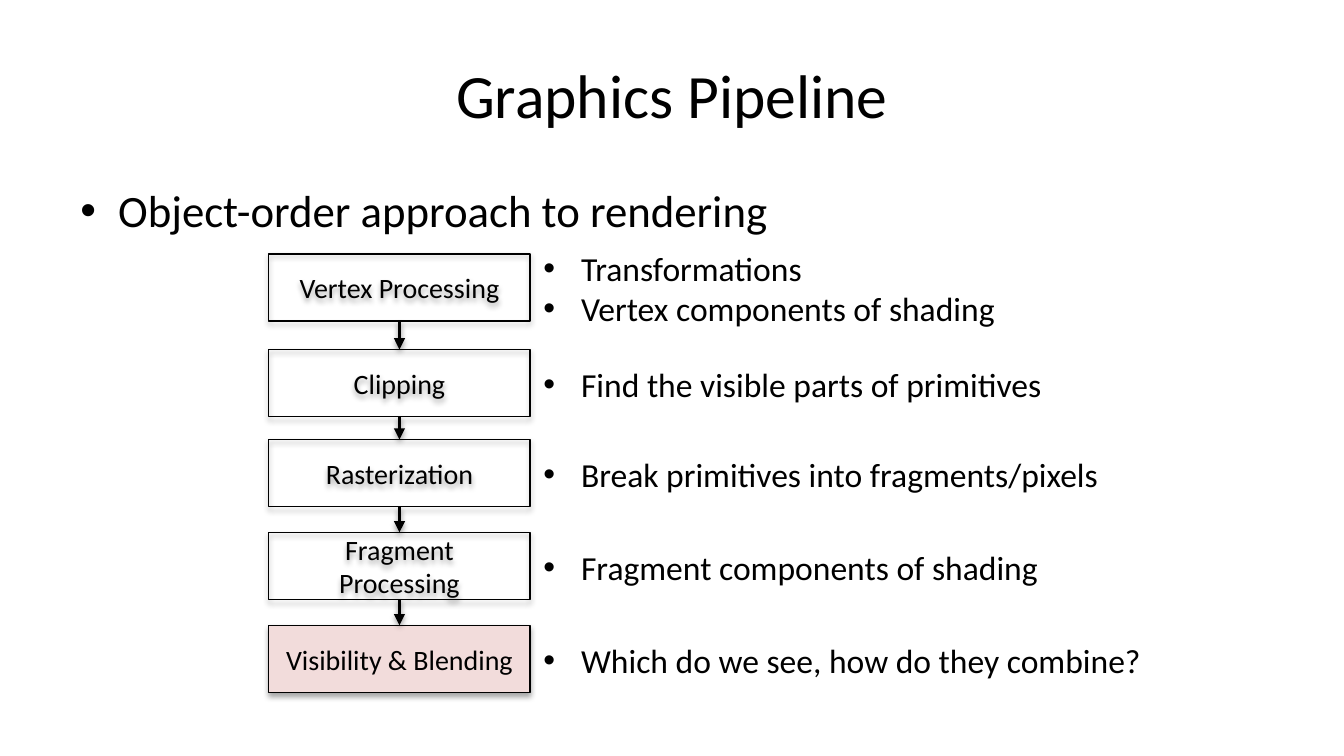
from dataclasses import dataclass

from pptx import Presentation
from pptx.dml.color import RGBColor
from pptx.enum.shapes import MSO_CONNECTOR, MSO_SHAPE
from pptx.enum.text import MSO_ANCHOR, PP_ALIGN
from pptx.oxml.ns import qn
from pptx.util import Pt
from lxml import etree

RECTANGLE = MSO_SHAPE.RECTANGLE
STRAIGHT = MSO_CONNECTOR.STRAIGHT
TOP, MIDDLE = MSO_ANCHOR.TOP, MSO_ANCHOR.MIDDLE
LEFT, CENTER = PP_ALIGN.LEFT, PP_ALIGN.CENTER
TOP_SITE, BOTTOM_SITE = 0, 2


@dataclass(frozen=True)
class Theme:
    font: str = "Calibri"
    ink: RGBColor = RGBColor(0, 0, 0)
    highlight: RGBColor = RGBColor(0xF2, 0xDC, 0xDB)
    title_size: float = 33
    body_size: float = 24
    note_size: float = 18
    stage_size: float = 15


THEME = Theme()
BULLET_INDENT = 20.25
STAGE_LEFT, STAGE_WIDTH, STAGE_HEIGHT = 144, 140, 36
NOTE_LEFT, NOTE_WIDTH = STAGE_LEFT + STAGE_WIDTH, 346
NOTE_LINE, NOTE_PADDING = 22, 7.2
NOTE_DROP = 0.8  # notes sit slightly below the middle of their stage

# top, stage name, notes, fill
STAGES = [
    (136, "Vertex Processing", ["Transformations", "Vertex components of shading"], None),
    (187.2, "Clipping", ["Find the visible parts of primitives"], None),
    (235.5, "Rasterization", ["Break primitives into fragments/pixels"], None),
    (285.2, "Fragment Processing", ["Fragment components of shading"], None),
    (335, "Visibility & Blending", ["Which do we see, how do they combine?"], THEME.highlight),
]


def add_child(parent, tag, **values):
    return etree.SubElement(parent, qn(tag), {key: str(value) for key, value in values.items()})


def add_shadow(shape, opacity, blur, distance):
    """Give a shape or connector a soft black shadow straight below it."""
    effects = add_child(shape._element.spPr, "a:effectLst")
    shadow = add_child(effects, "a:outerShdw", blurRad=Pt(blur), dist=Pt(distance),
                       dir=90 * 60000, rotWithShape=0)
    color = add_child(shadow, "a:srgbClr", val="000000")
    add_child(color, "a:alpha", val=opacity * 1000)


def add_bullet(para):
    properties = para._p.get_or_add_pPr()
    properties.set("marL", str(Pt(BULLET_INDENT)))
    properties.set("indent", str(-Pt(BULLET_INDENT)))
    add_child(properties, "a:buFont", typeface="Arial")
    add_child(properties, "a:buChar", char="•")


def write(shape, lines, size, align=LEFT, anchor=TOP, bullet=False):
    frame = shape.text_frame
    frame.word_wrap = True
    frame.vertical_anchor = anchor
    for index, line in enumerate(lines):
        para = frame.add_paragraph() if index else frame.paragraphs[0]
        para.alignment = align
        if bullet:
            add_bullet(para)
        span = para.add_run()
        span.text = line
        for name, value in {"name": THEME.font, "size": Pt(size)}.items():
            setattr(span.font, name, value)
        span.font.color.rgb = THEME.ink


def add_text(page, bounds, lines, size, **layout):
    box = page.shapes.add_textbox(*map(Pt, bounds))
    write(box, lines, size, **layout)


def add_stage(page, top, name, fill):
    box = page.shapes.add_shape(
        RECTANGLE, *map(Pt, (STAGE_LEFT, top, STAGE_WIDTH, STAGE_HEIGHT)))
    if fill is None:
        box.fill.background()
    else:
        box.fill.solid()
        box.fill.fore_color.rgb = fill
    box.line.color.rgb = THEME.ink
    box.line.width = Pt(0.75)
    add_shadow(box, 35, 3.1, 1.8)
    write(box, [name], THEME.stage_size, align=CENTER, anchor=MIDDLE)
    return box


def add_notes(page, stage_top, notes):
    height = len(notes) * NOTE_LINE + NOTE_PADDING
    top = stage_top + (STAGE_HEIGHT - height) / 2 + NOTE_DROP
    add_text(page, (NOTE_LEFT, top, NOTE_WIDTH, height), notes, THEME.note_size, bullet=True)


def add_arrow(page, upper, lower):
    arrow = page.shapes.add_connector(STRAIGHT, 0, 0, 0, 0)
    arrow.begin_connect(upper, BOTTOM_SITE)
    arrow.end_connect(lower, TOP_SITE)
    arrow.line.color.rgb = THEME.ink
    arrow.line.width = Pt(2)
    add_child(arrow._element.spPr.find(qn("a:ln")), "a:tailEnd", type="triangle")
    add_shadow(arrow, 38, 3.1, 1.6)


def main():
    deck = Presentation()
    deck.slide_width, deck.slide_height = Pt(720), Pt(405)
    page = deck.slides.add_slide(deck.slide_layouts[6])

    add_text(page, (36, 16.5, 648, 67.5), ["Graphics Pipeline"], THEME.title_size,
             align=CENTER, anchor=MIDDLE)
    add_text(page, (36, 94.5, 648, 267), ["Object-order approach to rendering"],
             THEME.body_size, bullet=True)

    boxes = [add_stage(page, top, name, fill) for top, name, _, fill in STAGES]
    for upper, lower in zip(boxes, boxes[1:]):
        add_arrow(page, upper, lower)
    for top, _, notes, _ in STAGES:
        add_notes(page, top, notes)

    deck.save("out.pptx")


if __name__ == "__main__":
    main()
